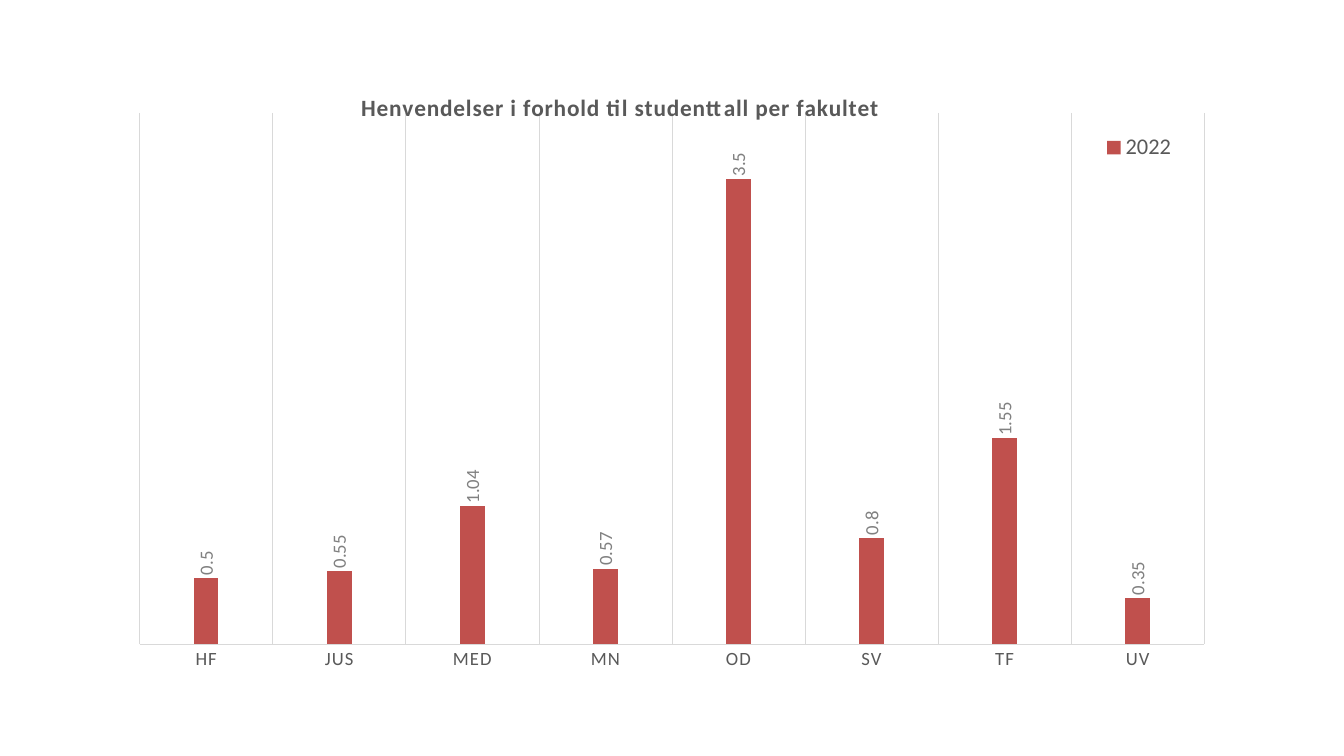
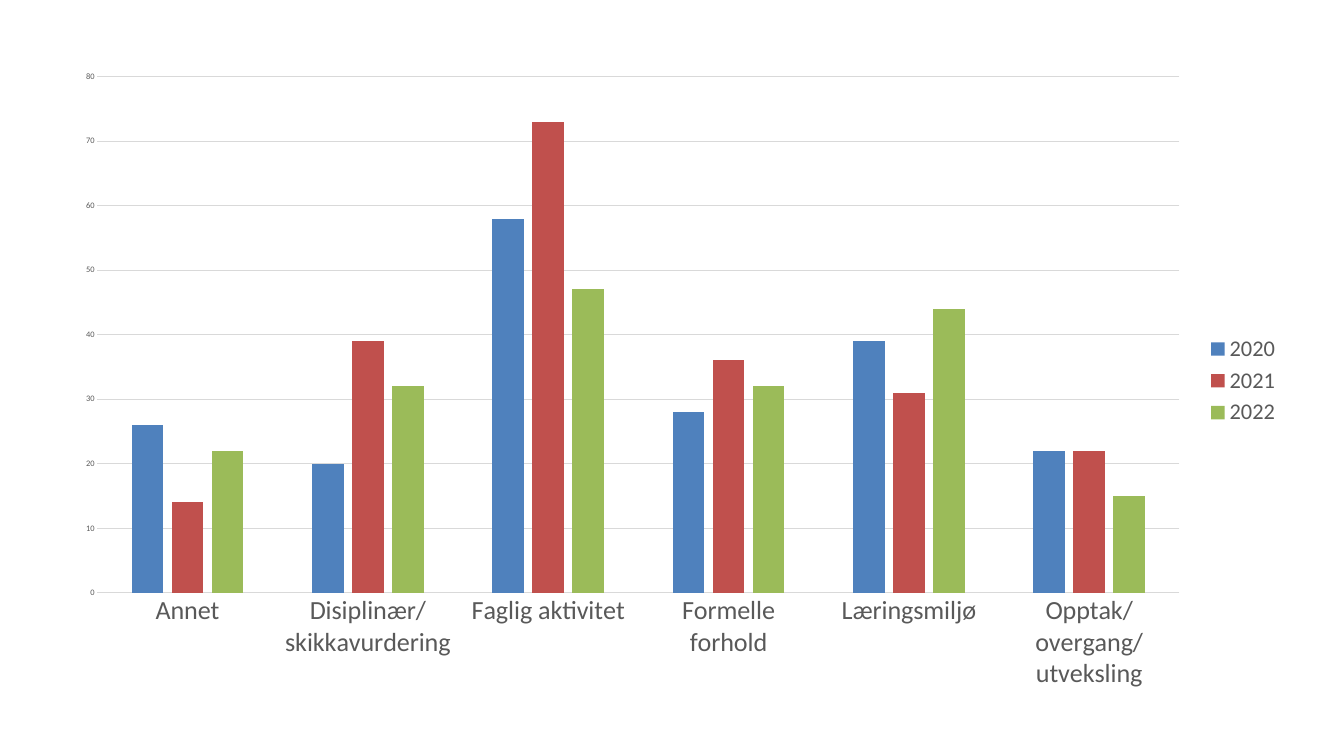
from dataclasses import dataclass

import pptx
import pptx.chart.axis
import pptx.chart.chart
import pptx.chart.data
import pptx.dml.color
import pptx.dml.line
import pptx.enum.chart
import pptx.oxml
import pptx.oxml.ns
import pptx.slide
import pptx.text.text
import pptx.util

Pt = pptx.util.Pt

FONT = "Calibri"
TEXT = "595959"
LABEL = "808080"
GRID = "D9D9D9"
YEAR_COLOURS = {"2020": "4F81BD", "2021": "C0504D", "2022": "9BBB59"}
BLANK_LAYOUT = 6


@dataclass
class Series:
    name: str
    values: list[float]
    colour: str


@dataclass
class ColumnChart:
    left: float
    top: float
    width: float
    height: float
    categories: list[str]
    series: list[Series]
    gap: int
    overlap: int
    category_size: float
    value_max: float
    value_step: float
    legend: pptx.enum.chart.XL_LEGEND_POSITION


FACULTIES = ColumnChart(
    138, 87, 1164, 678,
    ["HF", "JUS", "MED", "MN", "OD", "SV", "TF", "UV"],
    [Series("2022", [0.5, 0.55, 1.04, 0.57, 3.5, 0.8, 1.55, 0.35], "C0504D")],
    gap=444, overlap=-90, category_size=20, value_max=4, value_step=0.5,
    legend=pptx.enum.chart.XL_LEGEND_POSITION.TOP,
)

TOPIC_COUNTS = {
    "2020": [26, 20, 58, 28, 39, 22],
    "2021": [14, 39, 73, 36, 31, 22],
    "2022": [22, 32, 47, 32, 44, 15],
}
TOPICS = ColumnChart(
    66, 63, 1314, 690,
    ["Annet", "Disiplinær/skikkavurdering", "Faglig aktivitet",
     "Formelle forhold", "Læringsmiljø", "Opptak/overgang/utveksling"],
    [Series(year, counts, YEAR_COLOURS[year]) for year, counts in TOPIC_COUNTS.items()],
    gap=219, overlap=-27, category_size=28, value_max=80, value_step=10,
    legend=pptx.enum.chart.XL_LEGEND_POSITION.RIGHT,
)


def rgb(colour: str) -> pptx.dml.color.RGBColor:
    return pptx.dml.color.RGBColor.from_string(colour)


def style_font(font: pptx.text.text.Font, size: float, colour: str = TEXT,
               bold: bool = False) -> None:
    font.name = FONT
    font.size = Pt(size)
    font.bold = bold
    font.color.rgb = rgb(colour)


def style_line(line: pptx.dml.line.LineFormat) -> None:
    line.color.rgb = rgb(GRID)
    line.width = Pt(0.75)


def style_axis(axis: pptx.chart.axis._BaseAxis, size: float, gridlines: bool) -> None:
    axis.major_tick_mark = pptx.enum.chart.XL_TICK_MARK.NONE
    axis.minor_tick_mark = pptx.enum.chart.XL_TICK_MARK.NONE
    style_font(axis.tick_labels.font, size)
    axis.has_major_gridlines = gridlines
    if gridlines:
        style_line(axis.major_gridlines.format.line)


def place(chart: pptx.chart.chart.Chart, part: str, **fractions: float) -> None:
    """Give a chart part a manual layout in fractions of the chart."""
    element = chart.element.xpath(f"c:chart/c:{part}")[0]
    for old in element.xpath("c:layout"):
        element.remove(old)
    target = '<c:layoutTarget val="inner"/>' if part == "plotArea" else ""
    modes = "".join(f'<c:{key}Mode val="edge"/>' for key in "xy")
    sizes = "".join(f'<c:{key} val="{value}"/>' for key, value in fractions.items())
    layout = pptx.oxml.parse_xml(
        f'<c:layout {pptx.oxml.ns.nsdecls("c")}><c:manualLayout>'
        f"{target}{modes}{sizes}</c:manualLayout></c:layout>")
    overlay = element.xpath("c:overlay")
    if overlay:
        overlay[0].addprevious(layout)
    else:
        element.insert(0, layout)


def add_column_chart(page: pptx.slide.Slide, spec: ColumnChart) -> pptx.chart.chart.Chart:
    data = pptx.chart.data.CategoryChartData()
    data.categories = spec.categories
    for series in spec.series:
        data.add_series(series.name, series.values)
    chart = page.shapes.add_chart(
        pptx.enum.chart.XL_CHART_TYPE.COLUMN_CLUSTERED,
        Pt(spec.left), Pt(spec.top), Pt(spec.width), Pt(spec.height), data).chart
    style_font(chart.font, 10, "000000")
    chart.has_title = False

    # Columns
    plot = chart.plots[0]
    plot.vary_by_categories = False
    plot.gap_width = spec.gap
    plot.overlap = spec.overlap
    for drawn, series in zip(plot.series, spec.series):
        drawn.format.fill.solid()
        drawn.format.fill.fore_color.rgb = rgb(series.colour)

    # Axes
    style_axis(chart.category_axis, spec.category_size, gridlines=False)
    style_line(chart.category_axis.format.line)
    style_axis(chart.value_axis, 9, gridlines=True)
    chart.value_axis.format.line.fill.background()
    chart.value_axis.minimum_scale = 0
    chart.value_axis.maximum_scale = spec.value_max
    chart.value_axis.major_unit = spec.value_step

    # Legend
    chart.has_legend = True
    chart.legend.position = spec.legend
    chart.legend.include_in_layout = False
    style_font(chart.legend.font, 24)
    return chart


def add_faculty_page(deck: pptx.presentation.Presentation) -> None:
    page = deck.slides.add_slide(deck.slide_layouts[BLANK_LAYOUT])
    chart = add_column_chart(page, FACULTIES)

    # Only vertical gridlines, no value axis
    chart.value_axis.visible = False
    chart.value_axis.has_major_gridlines = False
    chart.category_axis.has_major_gridlines = True
    style_line(chart.category_axis.major_gridlines.format.line)

    # Title
    chart.has_title = True
    para = chart.chart_title.text_frame.paragraphs[0]
    para.text = "Henvendelser i forhold til studenttall per fakultet"
    style_font(para.font, 25, bold=True)

    # Upright value labels
    labels = chart.plots[0].series[0].data_labels
    labels.show_value = True
    labels.position = pptx.enum.chart.XL_LABEL_POSITION.OUTSIDE_END
    style_font(labels.font, 20, LABEL)
    body = chart.element.xpath(".//c:dLbls/c:txPr/a:bodyPr")[0]
    body.set("rot", "-5400000")
    body.set("vert", "horz")

    # Wide letter spacing in title and categories
    for properties in chart.element.xpath(
            ".//c:title//a:defRPr | .//c:catAx/c:txPr//a:defRPr"):
        properties.set("spc", "100")

    place(chart, "title", x=0.21, y=0.01)
    place(chart, "plotArea", x=0.01, y=0.05, w=0.98, h=0.84)
    place(chart, "legend", x=0.89, y=0.08, w=0.08, h=0.05)


def add_topic_page(deck: pptx.presentation.Presentation) -> None:
    page = deck.slides.add_slide(deck.slide_layouts[BLANK_LAYOUT])
    add_column_chart(page, TOPICS)


def main() -> None:
    deck = pptx.Presentation()
    deck.slide_width, deck.slide_height = Pt(1440), Pt(810)
    add_faculty_page(deck)
    add_topic_page(deck)
    deck.save("out.pptx")


if __name__ == "__main__":
    main()
